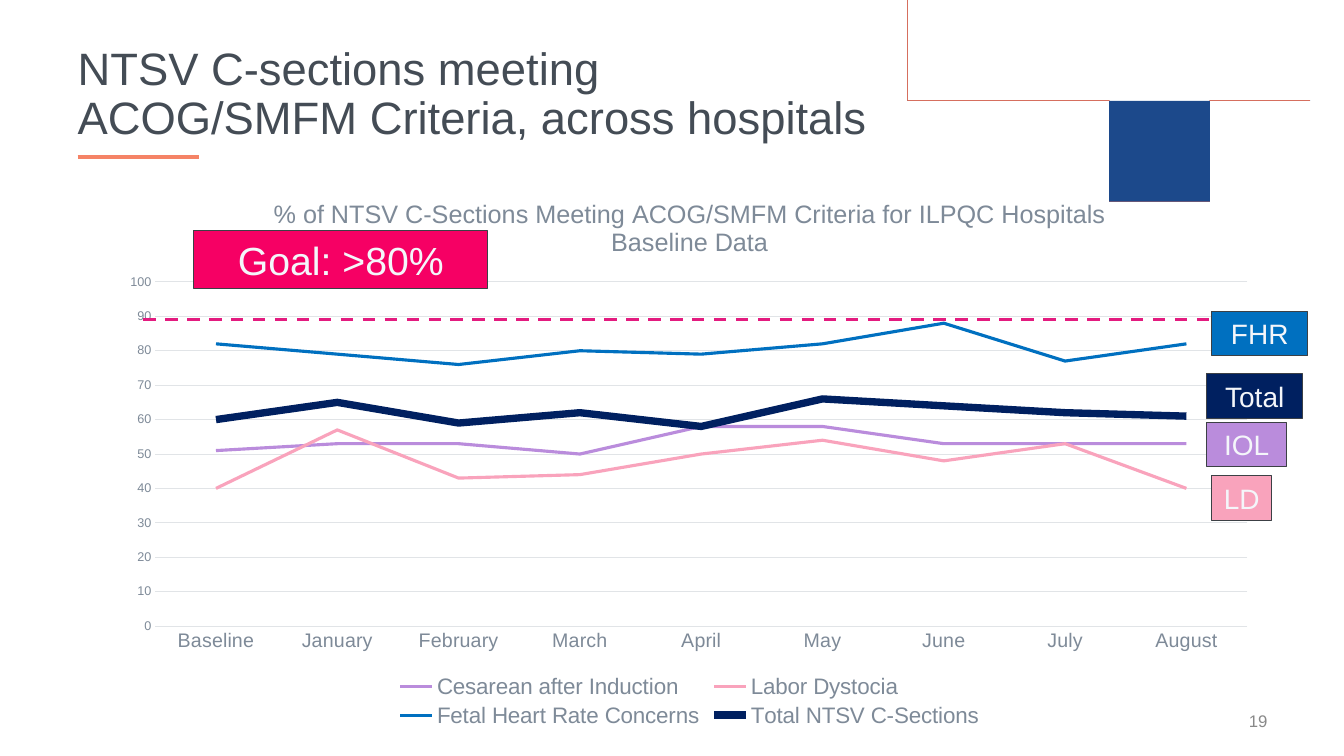
from lxml import etree
from pptx import Presentation
from pptx.chart.data import CategoryChartData
from pptx.dml.color import RGBColor
from pptx.enum import chart as charts, dml, shapes, text
from pptx.oxml import parse_xml
from pptx.oxml.ns import nsdecls, qn
from pptx.util import Inches, Pt

FONT = "Arial"
SLATE = RGBColor(0x44, 0x4C, 0x55)
GRAY = RGBColor(0x7E, 0x8A, 0x98)
NUMBER_GRAY = RGBColor(0x89, 0x89, 0x89)
GRID = RGBColor(0xE1, 0xE4, 0xE7)
OUTLINE = RGBColor(0x3C, 0x40, 0x45)
OFF_WHITE = RGBColor(0xF4, 0xF6, 0xFA)
RED_ORANGE = RGBColor(0xF0, 0x41, 0x15)
CORAL = RGBColor(0xF5, 0x83, 0x66)
SWOOSH_BLUE = RGBColor(0x1C, 0x49, 0x8B)
GOAL_PINK = RGBColor(0xF6, 0x00, 0x64)
GOAL_LINE = RGBColor(0xE3, 0x1B, 0x7F)
PURPLE = RGBColor(0xBA, 0x8C, 0xDC)
PINK = RGBColor(0xF9, 0xA3, 0xBC)
BLUE = RGBColor(0x00, 0x70, 0xC0)
NAVY = RGBColor(0x00, 0x20, 0x60)

MONTHS = ["Baseline", "January", "February", "March", "April", "May",
          "June", "July", "August"]
SERIES = [
    ("Cesarean after Induction", [51, 53, 53, 50, 58, 58, 53, 53, 53], PURPLE, 2.25),
    ("Labor Dystocia", [40, 57, 43, 44, 50, 54, 48, 53, 40], PINK, 2.25),
    ("Fetal Heart Rate Concerns", [82, 79, 76, 80, 79, 82, 88, 77, 82], BLUE, 2.25),
    ("Total NTSV C-Sections", [60, 65, 59, 62, 58, 66, 64, 62, 61], NAVY, 5.25),
]
SERIES_LABELS = [
    ("FHR", 12.02, 3.09, 0.95, BLUE),
    ("LD", 12.02, 4.72, 0.59, PINK),
    ("IOL", 11.97, 4.19, 0.79, PURPLE),
    ("Total", 11.97, 3.71, 0.95, NAVY),
]
ORANGE_TOP = [(8.05, 0), (8.82, 0.54), (9.58, 0.99), (10.39, 1.33), (10.81, 1.44),
              (11.25, 1.5), (11.68, 1.52), (12.01, 1.51), (12.34, 1.47),
              (12.67, 1.4), (12.93, 1.33), (13.33, 1.2)]
ORANGE_BOTTOM = [(7.86, 0), (8.78, 0.62), (9.55, 1.06), (10.37, 1.39), (10.8, 1.49),
                 (11.24, 1.55), (11.69, 1.56), (11.91, 1.55), (12.24, 1.51),
                 (12.67, 1.42), (12.94, 1.35), (13.33, 1.21)]
BLUE_TOP = [(8.27, 0), (8.79, 0.38), (9.54, 0.86), (10.34, 1.23), (10.9, 1.4),
            (11.5, 1.47), (12.09, 1.45), (12.42, 1.42), (12.75, 1.36),
            (12.97, 1.3), (13.33, 1.19)]
BLUE_BOTTOM = [(8.02, 0), (8.71, 0.49), (9.48, 0.96), (10.31, 1.31), (10.8, 1.44),
               (11.19, 1.5), (11.64, 1.52), (12.09, 1.49), (12.42, 1.45),
               (12.75, 1.38), (12.97, 1.32), (13.33, 1.2)]


def format_font(font, size, color):
    font.name, font.size, font.bold = FONT, Pt(size), False
    font.color.rgb = color


def write_text(shape, content, size, color, align=text.PP_ALIGN.LEFT,
               anchor=text.MSO_ANCHOR.MIDDLE, line_spacing=None):
    frame = shape.text_frame
    frame.word_wrap = True
    frame.vertical_anchor = anchor
    frame.text = content
    for paragraph in frame.paragraphs:
        paragraph.alignment = align
        paragraph.line_spacing = line_spacing
        format_font(paragraph.font, size, color)
        for run in paragraph.runs:
            format_font(run.font, size, color)


def smooth(points, steps=8):
    """Return a Catmull-Rom curve through the points."""
    padded = [points[0], *points, points[-1]]
    curve = []
    for a, b, c, d in zip(padded, padded[1:], padded[2:], padded[3:]):
        for step in range(steps):
            t = step / steps
            curve.append(tuple(
                q + t * (r - p) / 2 + t**2 * (2 * p - 5 * q + 4 * r - s) / 2
                + t**3 * (3 * q - p - 3 * r + s) / 2
                for p, q, r, s in zip(a, b, c, d)))
    return curve + [points[-1]]


def add_swoosh(slide, top, bottom):
    outline = smooth(top) + smooth(bottom)[::-1]
    builder = slide.shapes.build_freeform(*outline[0], scale=Inches(1))
    builder.add_line_segments(outline[1:], close=True)
    shape = builder.convert_to_shape()
    shape.shadow.inherit = False
    shape.line.fill.background()
    return shape


def fill_orange(shape):
    shape.fill.gradient()
    shape.fill.gradient_angle = 0
    for stop, color, position in zip(shape.fill.gradient_stops,
                                     (RED_ORANGE, CORAL), (0, 0.2)):
        stop.color.rgb = color
        stop.position = position


def add_line(slide, left, right, y, color, width, dash=None):
    line = slide.shapes.add_connector(
        shapes.MSO_CONNECTOR.STRAIGHT, Inches(left), Inches(y), Inches(right), Inches(y))
    line.line.color.rgb = color
    line.line.width = Pt(width)
    line.line.dash_style = dash
    etree.SubElement(line._element.spPr, qn("a:effectLst"))


def add_label(slide, content, left, top, width, height, fill, size):
    shape = slide.shapes.add_shape(
        shapes.MSO_SHAPE.RECTANGLE, Inches(left), Inches(top), Inches(width), Inches(height))
    shape.shadow.inherit = False
    shape.fill.solid()
    shape.fill.fore_color.rgb = fill
    shape.line.color.rgb = OUTLINE
    shape.line.width = Pt(0.75)
    write_text(shape, content, size, OFF_WHITE, align=text.PP_ALIGN.CENTER)


def set_plot_area(chart, x, y, w, h):
    """Fix the inner plot area, in fractions of the chart."""
    plot_area = chart._chartSpace.chart.plotArea
    for layout in plot_area.findall(qn("c:layout")):
        plot_area.remove(layout)
    sizes = "".join(f'<c:{tag} val="{value}"/>'
                    for tag, value in zip("xywh", (x, y, w, h)))
    plot_area.insert(0, parse_xml(
        f'<c:layout {nsdecls("c")}><c:manualLayout><c:layoutTarget val="inner"/>'
        f'<c:xMode val="edge"/><c:yMode val="edge"/>{sizes}</c:manualLayout></c:layout>'))


def format_axis(axis, size):
    axis.major_tick_mark = axis.minor_tick_mark = charts.XL_TICK_MARK.NONE
    format_font(axis.tick_labels.font, size, GRAY)


def add_criteria_chart(slide):
    data = CategoryChartData()
    data.categories = MONTHS
    for name, values, _, _ in SERIES:
        data.add_series(name, values)
    chart = slide.shapes.add_chart(
        charts.XL_CHART_TYPE.LINE, Inches(1.08), Inches(1.75),
        Inches(11.52), Inches(5.51), data).chart
    format_font(chart.font, 10, SLATE)

    title = chart.chart_title.text_frame
    title.text = "% of NTSV C-Sections Meeting ACOG/SMFM Criteria for ILPQC Hospitals Baseline Data"
    format_font(title.paragraphs[0].runs[0].font, 18, GRAY)

    chart.has_legend = True
    chart.legend.position = charts.XL_LEGEND_POSITION.BOTTOM
    chart.legend.include_in_layout = False
    format_font(chart.legend.font, 16, GRAY)

    format_axis(chart.category_axis, 14)
    chart.category_axis.format.line.color.rgb = GRID
    chart.category_axis.format.line.width = Pt(0.75)
    value_axis = chart.value_axis
    format_axis(value_axis, 9)
    value_axis.minimum_scale, value_axis.maximum_scale, value_axis.major_unit = 0, 100, 10
    value_axis.format.line.fill.background()
    value_axis.major_gridlines.format.line.color.rgb = GRID
    value_axis.major_gridlines.format.line.width = Pt(0.75)
    set_plot_area(chart, 0.04, 0.19, 0.94, 0.62)

    chart.plots[0].vary_by_categories = False
    for series, (_, _, color, width) in zip(chart.plots[0].series, SERIES):
        series.smooth = False
        series.marker.style = charts.XL_MARKER_STYLE.NONE
        series.format.line.color.rgb = color
        series.format.line.width = Pt(width)


def main():
    presentation = Presentation()
    presentation.slide_width, presentation.slide_height = Inches(13.33), Inches(7.5)
    slide = presentation.slides.add_slide(presentation.slide_layouts[5])

    title = slide.shapes.title
    title.left, title.top, title.width, title.height = map(Inches, (0.67, 0.22, 8.85, 1.45))
    write_text(title, "NTSV C-sections meeting\vACOG/SMFM Criteria, across hospitals",
               32.4, SLATE, line_spacing=0.9)

    fill_orange(add_swoosh(slide, ORANGE_TOP, ORANGE_BOTTOM))
    blue_swoosh = add_swoosh(slide, BLUE_TOP, BLUE_BOTTOM)
    blue_swoosh.fill.solid()
    blue_swoosh.fill.fore_color.rgb = SWOOSH_BLUE
    add_line(slide, 0.77, 1.97, 1.56, CORAL, 2.5)

    add_criteria_chart(slide)
    number = slide.shapes.add_textbox(Inches(9.67), Inches(6.95), Inches(3), Inches(0.4))
    write_text(number, "19", 12, NUMBER_GRAY, align=text.PP_ALIGN.RIGHT)
    add_line(slide, 1.42, 12.5, 3.17, GOAL_LINE, 2.25, dash=dml.MSO_LINE.DASH)
    add_label(slide, "Goal: >80%", 1.92, 2.29, 2.92, 0.57, GOAL_PINK, 28)
    for content, left, top, width, fill in SERIES_LABELS:
        add_label(slide, content, left, top, width, 0.44, fill, 20)

    presentation.save("out.pptx")


if __name__ == "__main__":
    main()
